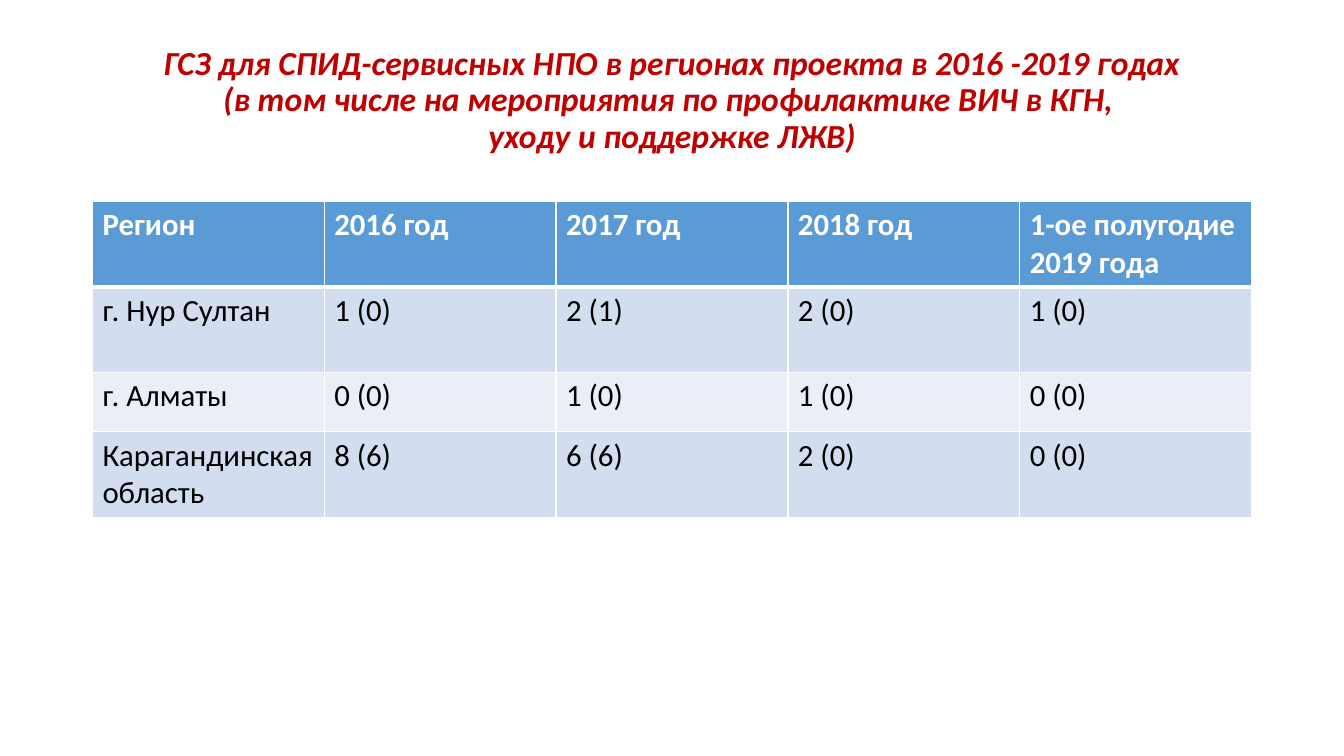
from dataclasses import dataclass

from lxml import etree
from pptx import Presentation
from pptx.dml.color import RGBColor
from pptx.enum.text import MSO_ANCHOR, PP_ALIGN
from pptx.oxml.ns import qn
from pptx.util import Cm, Pt

CENTER = PP_ALIGN.CENTER
MIDDLE = MSO_ANCHOR.MIDDLE
FONT = "Calibri"
COLORS = {
    "title": "C00000",
    "header": "5B9BD5",
    "band_dark": "D2DEEF",
    "band_light": "EAEFF7",
    "white": "FFFFFF",
    "black": "000000",
}
LEFT, WIDTH = 2.33, 29.21
TITLE_TOP, TITLE_HEIGHT = 1.01, 3.07
TABLE_TOP = 5.08
THIN, THICK = 1, 3
TITLE_LINES = (
    "ГСЗ для СПИД-сервисных НПО в регионах проекта в 2016 -2019 годах",
    "(в том числе на мероприятия по профилактике ВИЧ в КГН, ",
    "уходу и поддержке ЛЖВ)",
)


@dataclass(frozen=True)
class TableRow:
    values: tuple[str, ...]
    height: float
    fill: str
    color: str = "black"
    bold: bool = False
    top: int = THIN
    bottom: int = THIN


ROWS = (
    TableRow(("Регион", "2016 год", "2017 год", "2018 год", "1-ое полугодие 2019 года"),
             2.15, "header", "white", bold=True, bottom=THICK),
    TableRow(("г. Нур Султан", "1 (0)", "2 (1)", "2 (0)", "1 (0)"), 2.15, "band_dark", top=THICK),
    TableRow(("г. Алматы", "0 (0)", "1 (0)", "1 (0)", "0 (0)"), 1.5, "band_light"),
    TableRow(("Карагандинская область", "8 (6)", "6 (6)", "2 (0)", "0 (0)"), 2.15, "band_dark"),
)


def add_run(paragraph, text: str, size: int, color: str, bold: bool, italic: bool = False) -> None:
    run = paragraph.add_run()
    run.text = text
    run.font.name = FONT
    run.font.size = Pt(size)
    run.font.bold = bold
    run.font.italic = italic
    run.font.color.rgb = RGBColor.from_string(COLORS[color])


def add_title(slide) -> None:
    shape = slide.shapes.add_textbox(Cm(LEFT), Cm(TITLE_TOP), Cm(WIDTH), Cm(TITLE_HEIGHT))
    frame = shape.text_frame
    frame.word_wrap = True
    frame.vertical_anchor = MIDDLE
    paragraph = frame.paragraphs[0]
    paragraph.alignment = CENTER
    paragraph.line_spacing = 0.9
    for index, line in enumerate(TITLE_LINES):
        if index:
            paragraph.add_line_break()
        add_run(paragraph, line, 24, "title", bold=True, italic=True)


def set_borders(cell, top: int, bottom: int) -> None:
    properties = cell._tc.get_or_add_tcPr()
    sides = (("lnL", THIN), ("lnR", THIN), ("lnT", top), ("lnB", bottom))
    for position, (side, width) in enumerate(sides):
        border = etree.Element(qn(f"a:{side}"), w=str(Pt(width)))
        fill = etree.SubElement(border, qn("a:solidFill"))
        etree.SubElement(fill, qn("a:srgbClr"), val=COLORS["white"])
        properties.insert(position, border)


def add_region_table(slide) -> None:
    column_count = len(ROWS[0].values)
    height = sum(row.height for row in ROWS)
    table = slide.shapes.add_table(
        len(ROWS), column_count, Cm(LEFT), Cm(TABLE_TOP), Cm(WIDTH), Cm(height)
    ).table
    for column in table.columns:
        column.width = Cm(WIDTH / column_count)
    for row_index, row in enumerate(ROWS):
        table.rows[row_index].height = Cm(row.height)
        for column_index, value in enumerate(row.values):
            cell = table.cell(row_index, column_index)
            cell.fill.solid()
            cell.fill.fore_color.rgb = RGBColor.from_string(COLORS[row.fill])
            set_borders(cell, row.top, row.bottom)
            add_run(cell.text_frame.paragraphs[0], value, 22, row.color, row.bold)


def main() -> None:
    presentation = Presentation()
    presentation.slide_width = Cm(33.87)
    presentation.slide_height = Cm(19.05)
    slide = presentation.slides.add_slide(presentation.slide_layouts[6])
    add_title(slide)
    add_region_table(slide)
    presentation.save("out.pptx")


if __name__ == "__main__":
    main()
